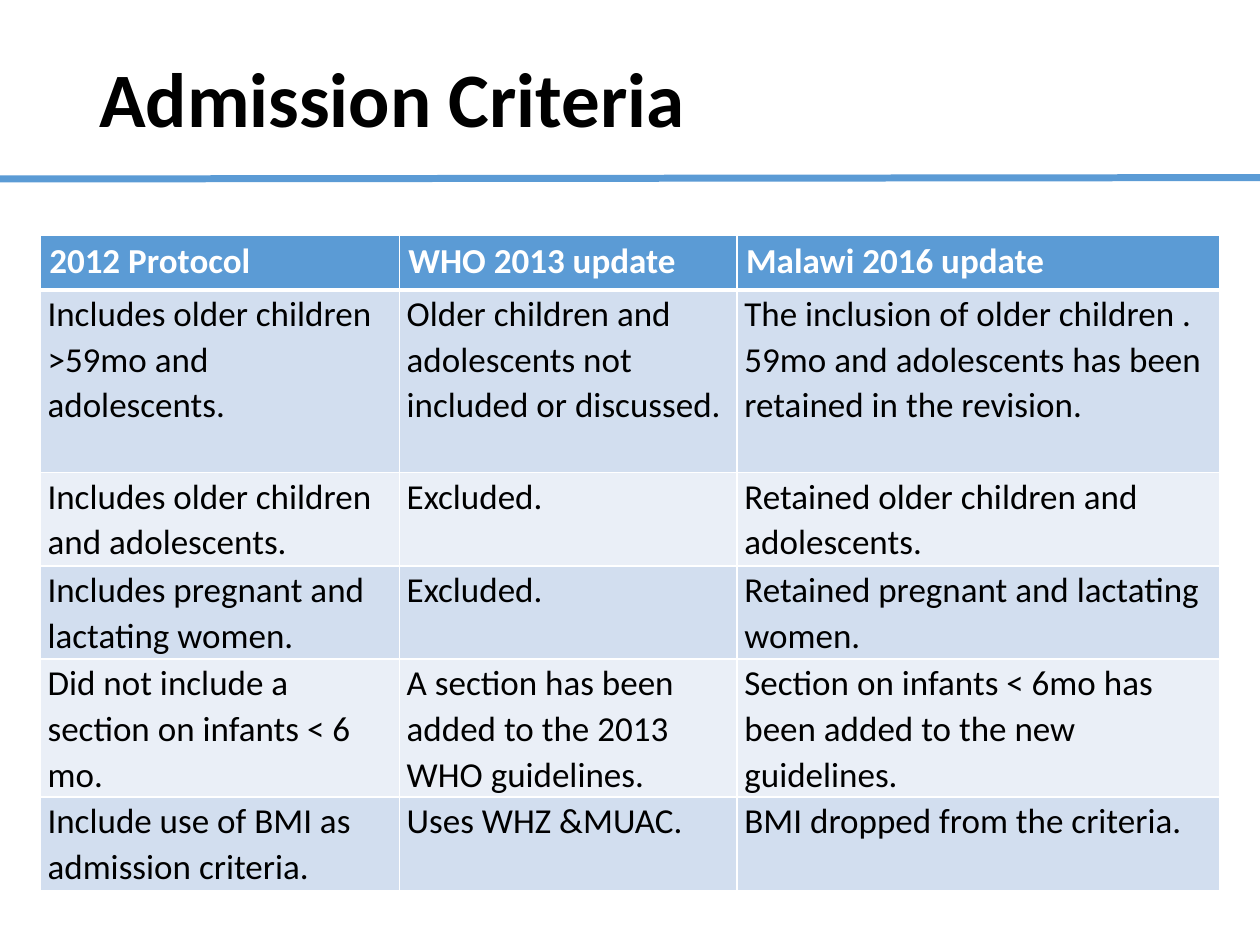
from lxml.etree import SubElement as Sub
from pptx import Presentation
from pptx.dml.color import RGBColor
from pptx.enum.shapes import MSO_CONNECTOR as Conn
from pptx.enum.text import MSO_ANCHOR as Anchor, PP_ALIGN as Align
from pptx.oxml.ns import qn
from pptx.util import Pt

TITLE = "Admission Criteria"
ROWS = [
    ("2012 Protocol", "WHO 2013 update", "Malawi 2016 update"),
    ("Includes older children >59mo and adolescents.",
     "Older children and adolescents not included or discussed.",
     "The inclusion of older children . 59mo and adolescents has been retained in the revision."),
    ("Includes older children and adolescents.", "Excluded.",
     "Retained older children and adolescents."),
    ("Includes pregnant and lactating women.", "Excluded.",
     "Retained pregnant and lactating women."),
    ("Did not include a section on infants < 6 mo.",
     "A section has been added to the 2013 WHO guidelines.",
     "Section on infants < 6mo has been added to the new guidelines."),
    ("Include use of BMI as admission criteria.", "Uses WHZ &MUAC.",
     "BMI dropped from the criteria."),
]
WIDTHS = [205.2, 193, 275.8]
HEIGHTS = [31, 104.4, 53.3, 53.3, 78.8, 53.3]
FONT = "Calibri"
BLUE = RGBColor(0x5B, 0x9B, 0xD5)
BANDS = [RGBColor(0xEA, 0xEF, 0xF7), RGBColor(0xD2, 0xDE, 0xEF)]
WHITE = RGBColor(255, 255, 255)
BLACK = RGBColor(0, 0, 0)


def style(para, size, color, bold):
    para.alignment = Align.LEFT
    for run in para.runs:
        font = run.font
        font.name, font.size, font.bold = FONT, Pt(size), bold
        font.color.rgb = color


def edge(cell, side, width):
    line = Sub(cell._tc.get_or_add_tcPr(), qn("a:ln" + side), w=str(Pt(width)))
    Sub(Sub(line, qn("a:solidFill")), qn("a:srgbClr"), val=str(WHITE))


def fill_cell(cell, text, row):
    head = row == 0
    cell.text_frame.text = text
    para = cell.text_frame.paragraphs[0]
    style(para, 20, WHITE if head else BLACK, head)
    if not head:
        para.line_spacing = 1.07
    cell.margin_left = cell.margin_right = Pt(5.2 if head else 4.2)
    cell.margin_top = cell.margin_bottom = Pt(2.8 if head else 0)
    for side in "LRTB":
        thick = (side, row) in [("B", 0), ("T", 1)]
        edge(cell, side, 3 if thick else 1)
    cell.fill.solid()
    cell.fill.fore_color.rgb = BLUE if head else BANDS[row % 2]


deck = Presentation()
deck.slide_width, deck.slide_height = Pt(720), Pt(540)
slide = deck.slides.add_slide(deck.slide_layouts[5])
shapes = slide.shapes

title = shapes.title
title.left, title.top, title.width, title.height = Pt(49.5), Pt(28.8), Pt(621), Pt(59.8)
title.text_frame.text = TITLE
title.text_frame.vertical_anchor = Anchor.MIDDLE
para = title.text_frame.paragraphs[0]
para.line_spacing = 0.9
style(para, 44, BLACK, True)

rule = shapes.add_connector(Conn.STRAIGHT, Pt(0), Pt(102.3), Pt(720), Pt(101.5))
rule.line.color.rgb = BLUE
rule.line.width = Pt(4)
Sub(rule._element.spPr, qn("a:effectLst"))

table = shapes.add_table(len(ROWS), len(WIDTHS), Pt(23), Pt(134.7),
                         Pt(sum(WIDTHS)), Pt(sum(HEIGHTS))).table
for col, width in zip(table.columns, WIDTHS):
    col.width = Pt(width)
for row, height in zip(table.rows, HEIGHTS):
    row.height = Pt(height)
for r, texts in enumerate(ROWS):
    for c, text in enumerate(texts):
        fill_cell(table.cell(r, c), text, r)

deck.save("out.pptx")
